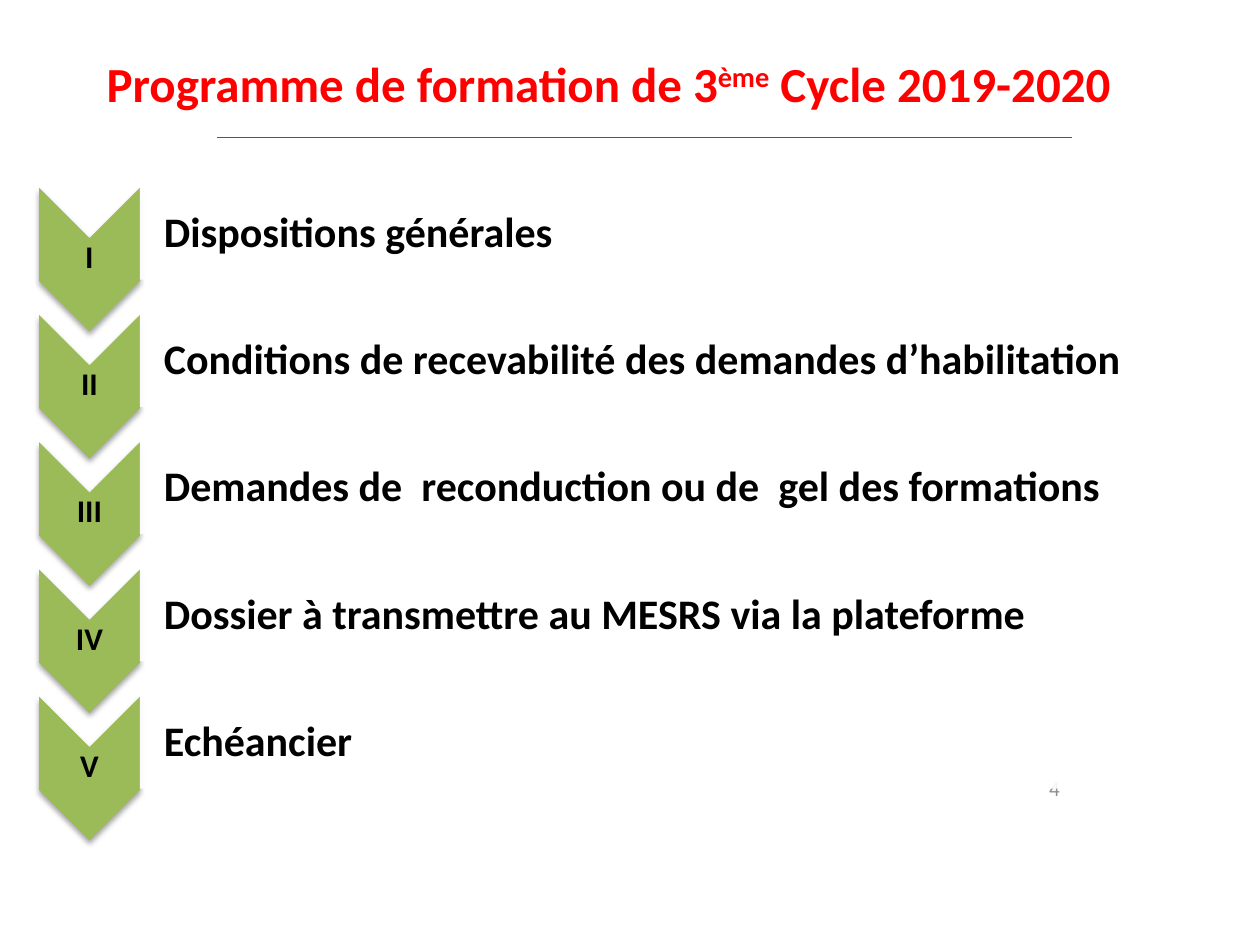
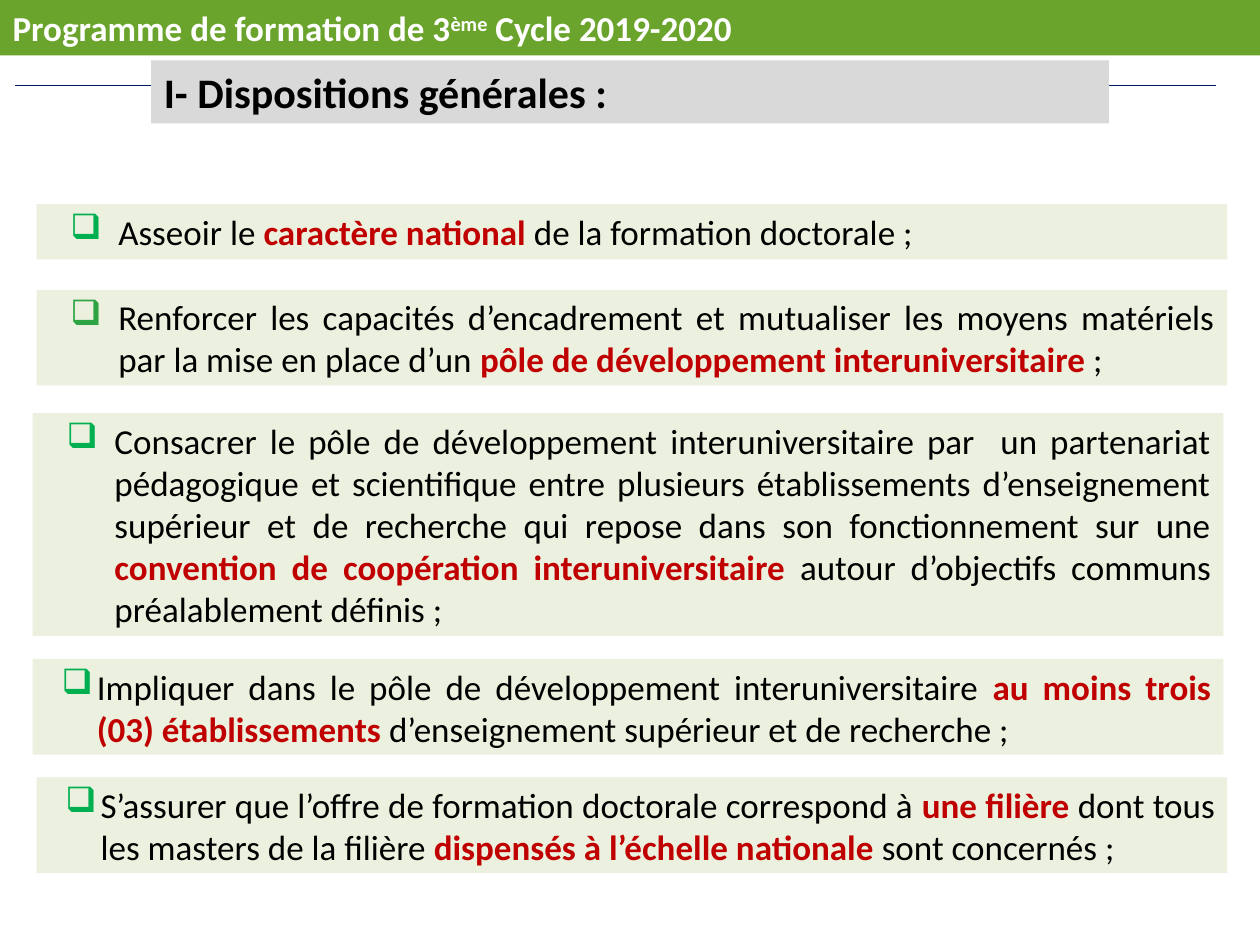
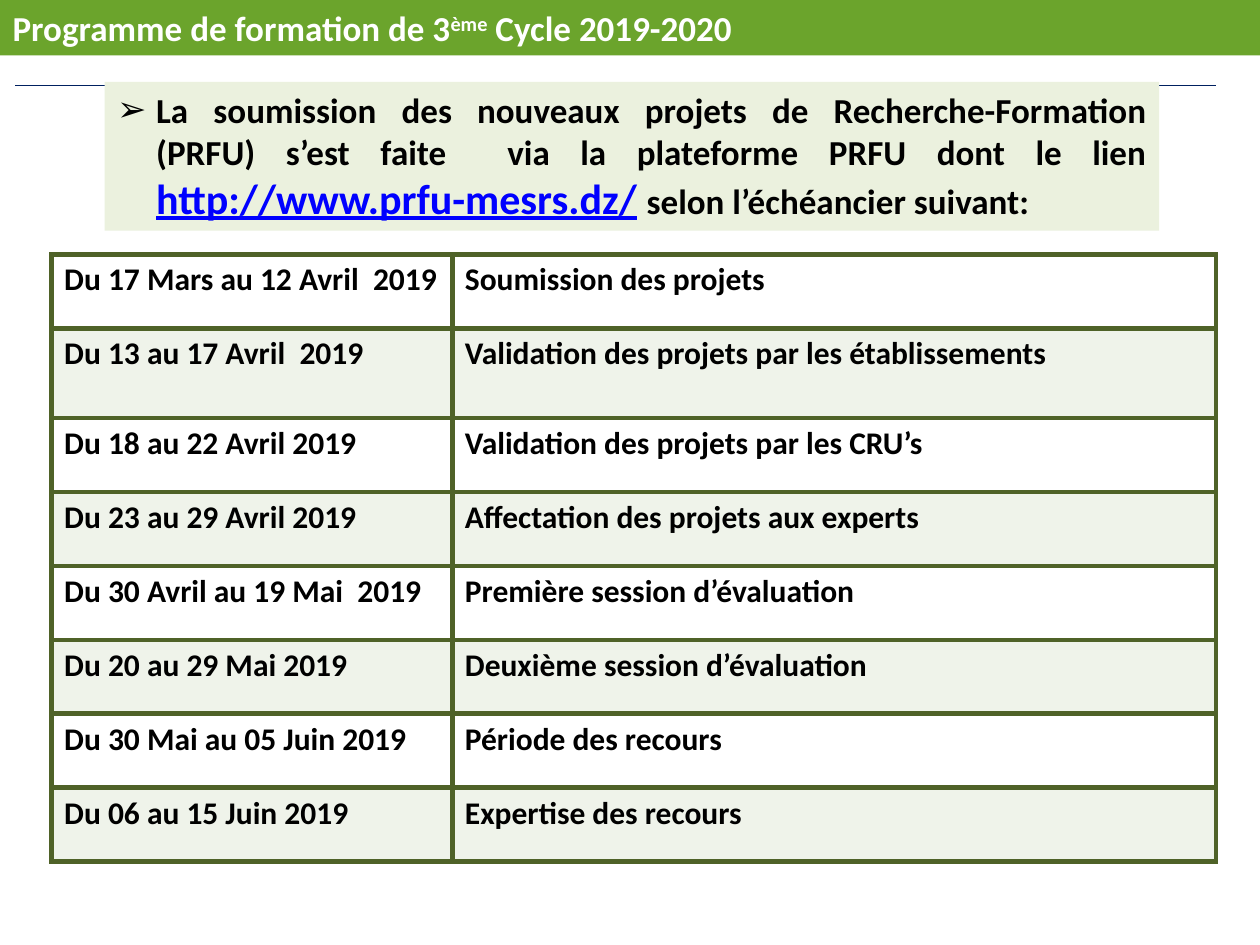
import dataclasses

import lxml.etree
import pptx
import pptx.dml.color
import pptx.enum.shapes
import pptx.enum.text
import pptx.oxml.ns
import pptx.util

Inches = pptx.util.Inches
Shape = pptx.enum.shapes.MSO_SHAPE
Align = pptx.enum.text.PP_ALIGN
Anchor = pptx.enum.text.MSO_ANCHOR
qualified = pptx.oxml.ns.qn


@dataclasses.dataclass(frozen=True)
class Theme:
    font: str = "Calibri"
    black: str = "000000"
    white: str = "FFFFFF"
    title_red: str = "FF0000"
    accent_red: str = "C00000"
    link_blue: str = "0000FF"
    page_grey: str = "8C8C8C"
    band_green: str = "6BA42C"
    chevron_green: str = "9BBB59"
    pale_green: str = "EBF1DE"
    stripe_green: str = "EFF3EA"
    border_green: str = "4F6228"
    bullet_green: str = "00B050"
    soft_bullet_green: str = "2DA343"
    heading_grey: str = "D9D9D9"
    agenda_rule: str = "297530"
    content_rule: str = "002060"
    title_size: int = 28
    heading_size: int = 24
    body_size: int = 20
    label_size: int = 18
    page_size: int = 12


THEME = Theme()
PROGRAMME = [
    ("Programme de formation de 3", {}),
    ("ème", {"superscript": True}),
    (" Cycle 2019-2020", {}),
]
AGENDA = [
    ("I", "Dispositions générales"),
    ("II", "Conditions de recevabilité des demandes d’habilitation"),
    ("III", "Demandes de  reconduction ou de  gel des formations"),
    ("IV", "Dossier à transmettre au MESRS via la plateforme"),
    ("V", "Echéancier"),
]
STRONG = {"color": THEME.accent_red, "bold": True}
WIDE_INDENT = (0.55, 0.38)
NARROW_INDENT = (0.41, 0.28)
PROVISIONS = [
    ((0.29, 1.62, 9.45, 0.44), WIDE_INDENT, THEME.bullet_green, [
        ("Asseoir le ", {}),
        ("caractère national ", STRONG),
        ("de la formation doctorale ;", {}),
    ]),
    ((0.29, 2.3, 9.45, 0.76), WIDE_INDENT, THEME.soft_bullet_green, [
        ("Renforcer les capacités d’encadrement et mutualiser les moyens matériels "
         "par la mise en place d’un ", {}),
        ("pôle de développement interuniversitaire ", STRONG),
        (";", {}),
    ]),
    ((0.26, 3.28, 9.45, 1.77), WIDE_INDENT, THEME.bullet_green, [
        ("Consacrer le pôle de développement interuniversitaire par  un partenariat "
         "pédagogique et scientifique entre plusieurs établissements d’enseignement "
         "supérieur et de recherche qui repose dans son fonctionnement sur une ", {}),
        ("convention de coopération interuniversitaire ", STRONG),
        ("autour d’objectifs communs préalablement définis ;", {}),
    ]),
    ((0.26, 5.23, 9.45, 0.76), NARROW_INDENT, THEME.bullet_green, [
        ("Impliquer dans le pôle de développement interuniversitaire ", {}),
        ("au moins trois (03) établissements ", STRONG),
        ("d’enseignement supérieur et de recherche ;", {}),
    ]),
    ((0.29, 6.17, 9.45, 0.76), NARROW_INDENT, THEME.bullet_green, [
        ("S’assurer que l’offre de formation doctorale correspond à ", {}),
        ("une filière ", STRONG),
        ("dont tous les masters de la filière ", {}),
        ("dispensés à l’échelle nationale ", STRONG),
        ("sont concernés ;", {}),
    ]),
]
SUBMISSION = [
    ("La soumission des nouveaux projets de Recherche-Formation (PRFU) s’est faite  "
     "via la plateforme PRFU dont le lien ", {}),
    ("http://www.prfu-mesrs.dz/",
     {"size": THEME.heading_size, "color": THEME.link_blue, "underline": True}),
    (" ", {"size": THEME.heading_size}),
    ("selon l’échéancier suivant:", {}),
]
SCHEDULE = [
    ("Du 17 Mars au 12 Avril  2019", "Soumission des projets"),
    ("Du 13 au 17 Avril  2019", "Validation des projets par les établissements"),
    ("Du 18 au 22 Avril 2019", "Validation des projets par les CRU’s"),
    ("Du 23 au 29 Avril 2019", "Affectation des projets aux experts"),
    ("Du 30 Avril au 19 Mai  2019", "Première session d’évaluation"),
    ("Du 20 au 29 Mai 2019", "Deuxième session d’évaluation"),
    ("Du 30 Mai au 05 Juin 2019", "Période des recours"),
    ("Du 06 au 15 Juin 2019", "Expertise des recours"),
]


def rgb(color):
    return pptx.dml.color.RGBColor.from_string(color)


def add_xml(parent, tag, **attributes):
    return lxml.etree.SubElement(parent, qualified(tag), attributes)


def fill_with(target, color):
    target.fill.solid()
    target.fill.fore_color.rgb = rgb(color)


def place(shape, box):
    shape.left, shape.top, shape.width, shape.height = map(Inches, box)


def write_text(frame, text, size=THEME.body_size, color=THEME.black, bold=False,
               align=Align.LEFT, anchor=Anchor.MIDDLE, insets=(0.1, 0.05, 0.1, 0.05),
               line_spacing=1.0, bullet=None, bullet_color=THEME.black, indent=(0, 0)):
    frame.word_wrap = True
    frame.auto_size = pptx.enum.text.MSO_AUTO_SIZE.NONE
    frame.vertical_anchor = anchor
    (frame.margin_left, frame.margin_top,
     frame.margin_right, frame.margin_bottom) = map(Inches, insets)
    paragraph = frame.paragraphs[0]
    paragraph.alignment = align
    paragraph.line_spacing = line_spacing
    paragraph.space_before = pptx.util.Pt(0)
    properties = paragraph._p.get_or_add_pPr()
    margin, hanging = indent
    properties.set("marL", str(Inches(margin)))
    properties.set("indent", str(-Inches(hanging)))
    if bullet:
        add_xml(add_xml(properties, "a:buClr"), "a:srgbClr", val=bullet_color)
        add_xml(properties, "a:buChar", char=bullet)
    else:
        add_xml(properties, "a:buNone")
    runs = [(text, {})] if isinstance(text, str) else text
    for words, changes in runs:
        run = paragraph.add_run()
        run.text = words
        run.font.name = THEME.font
        run.font.size = pptx.util.Pt(changes.get("size", size))
        run.font.color.rgb = rgb(changes.get("color", color))
        run.font.bold = changes.get("bold", bold)
        run.font.underline = changes.get("underline", False)
        if changes.get("superscript"):
            run._r.get_or_add_rPr().set("baseline", "30000")


def add_text(slide, box, text, **text_format):
    textbox = slide.shapes.add_textbox(*map(Inches, box))
    write_text(textbox.text_frame, text, **text_format)


def add_filled_shape(slide, kind, box, color):
    shape = slide.shapes.add_shape(kind, *map(Inches, box))
    shape.shadow.inherit = False
    fill_with(shape, color)
    shape.line.fill.background()
    return shape


def add_turned_shape(slide, kind, box, color):
    left, top, width, height = box
    offset = (width - height) / 2
    shape = add_filled_shape(slide, kind, (left + offset, top - offset, height, width), color)
    shape.rotation = 90
    return shape


def add_rule(slide, left, right, top, color):
    rule = slide.shapes.add_connector(
        pptx.enum.shapes.MSO_CONNECTOR.STRAIGHT,
        Inches(left), Inches(top), Inches(right), Inches(top))
    rule.line.color.rgb = rgb(color)
    rule.line.width = pptx.util.Pt(0.75)
    add_xml(rule._element.spPr, "a:effectLst")
    slide.shapes._spTree.insert(2, rule._element)


def add_agenda_row(slide, box, numeral, label):
    left, top, width, height = box
    chevron_width = 0.8
    chevron = add_turned_shape(
        slide, Shape.CHEVRON, (left, top, chevron_width, height), THEME.chevron_green)
    effects = chevron._element.spPr.find(qualified("a:effectLst"))
    shadow = add_xml(effects, "a:outerShdw", blurRad="40000", dist="23000",
                     dir="5400000", rotWithShape="0")
    shadow_color = add_xml(shadow, "a:srgbClr", val=THEME.black)
    add_xml(shadow_color, "a:alpha", val="35000")
    add_text(slide, (left, top + 0.39, chevron_width, 0.34), numeral,
             size=THEME.label_size, bold=True, align=Align.CENTER,
             insets=(0.01,) * 4, line_spacing=0.9)

    panel_left = left + chevron_width
    panel_width = width - chevron_width
    panel = add_turned_shape(slide, Shape.ROUND_2_SAME_RECTANGLE,
                             (panel_left, top - 0.01, panel_width, 0.74), THEME.white)
    panel_color = panel._element.spPr.find(".//" + qualified("a:srgbClr"))
    add_xml(panel_color, "a:alpha", val="90000")
    add_text(slide, (panel_left, top + 0.03, panel_width, 0.67), label,
             size=THEME.heading_size, bold=True,
             insets=(0.19, 0.02, 0.02, 0.02), line_spacing=0.9)


def add_agenda(slide, box):
    left, top, width, row_height = box
    pitch = 1.01
    for index, (numeral, label) in enumerate(AGENDA):
        add_agenda_row(slide, (left, top + index * pitch, width, row_height), numeral, label)


def add_provision(slide, box, indent, bullet_color, runs):
    panel = add_filled_shape(slide, Shape.RECTANGLE, box, THEME.pale_green)
    write_text(panel.text_frame, runs, align=Align.JUSTIFY, anchor=Anchor.TOP,
               bullet="❑", bullet_color=bullet_color, indent=indent)


def add_schedule(slide, box):
    row_count, column_count = len(SCHEDULE), len(SCHEDULE[0])
    table = slide.shapes.add_table(row_count, column_count, *map(Inches, box)).table
    table.first_row = False
    table.horz_banding = False
    first_column = 3.18
    table.columns[0].width = Inches(first_column)
    table.columns[1].width = Inches(box[2] - first_column)
    tall_row = 0.71
    for row_index, entries in enumerate(SCHEDULE):
        table.rows[row_index].height = Inches(
            tall_row if row_index == 1 else (box[3] - tall_row) / (row_count - 1))
        for column_index, words in enumerate(entries):
            format_cell(table.cell(row_index, column_index), words,
                        THEME.stripe_green if row_index % 2 else THEME.white)


def format_cell(cell, words, color):
    cell.vertical_anchor = Anchor.TOP
    paragraph = cell.text_frame.paragraphs[0]
    run = paragraph.add_run()
    run.text = words
    run.font.name = THEME.font
    run.font.size = pptx.util.Pt(THEME.label_size)
    run.font.bold = True
    run.font.color.rgb = rgb(THEME.black)
    properties = cell._tc.get_or_add_tcPr()
    for side in ("a:lnL", "a:lnR", "a:lnT", "a:lnB"):
        border = add_xml(properties, side, w=str(pptx.util.Pt(3)))
        add_xml(add_xml(border, "a:solidFill"), "a:srgbClr", val=THEME.border_green)
    fill_with(cell, color)


def start_content_slide(presentation, body_box, body_color):
    slide = presentation.slides.add_slide(presentation.slide_layouts[1])
    band = slide.shapes.title
    place(band, (0, 0, 10, 0.44))
    fill_with(band, THEME.band_green)
    write_text(band.text_frame, PROGRAMME, color=THEME.white, bold=True)
    add_rule(slide, 0.12, 9.65, 0.68, THEME.content_rule)
    body = slide.placeholders[1]
    place(body, body_box)
    fill_with(body, body_color)
    return slide, body


def build_agenda_slide(presentation):
    slide = presentation.slides.add_slide(presentation.slide_layouts[5])
    title = slide.shapes.title
    place(title, (0.14, 0.22, 9.38, 0.87))
    write_text(title.text_frame, PROGRAMME, size=THEME.title_size,
               color=THEME.title_red, bold=True, align=Align.CENTER)
    add_rule(slide, 1.72, 8.51, 1.09, THEME.agenda_rule)
    add_text(slide, (8.01, 6.04, 0.5, 0.43), "4", size=THEME.page_size,
             color=THEME.page_grey, align=Align.RIGHT)
    add_agenda(slide, (0.31, 1.49, 9.38, 1.14))


def build_provisions_slide(presentation):
    slide, heading = start_content_slide(
        presentation, (1.2, 0.48, 7.6, 0.5), THEME.heading_grey)
    write_text(heading.text_frame, "I- Dispositions générales :",
               size=THEME.heading_size, bold=True)
    for box, indent, bullet_color, runs in PROVISIONS:
        add_provision(slide, box, indent, bullet_color, runs)


def build_schedule_slide(presentation):
    slide, lead = start_content_slide(
        presentation, (0.83, 0.65, 8.37, 1.18), THEME.pale_green)
    bold_runs = [(words, {"bold": True, **changes}) for words, changes in SUBMISSION]
    write_text(lead.text_frame, bold_runs, align=Align.JUSTIFY, anchor=Anchor.TOP,
               bullet="➢", indent=(0.31, 0.31))
    add_schedule(slide, (0.41, 2.02, 9.24, 4.82))


def main():
    presentation = pptx.Presentation()
    presentation.slide_width = Inches(10)
    presentation.slide_height = Inches(7.5)
    build_agenda_slide(presentation)
    build_provisions_slide(presentation)
    build_schedule_slide(presentation)
    presentation.save("out.pptx")


if __name__ == "__main__":
    main()
